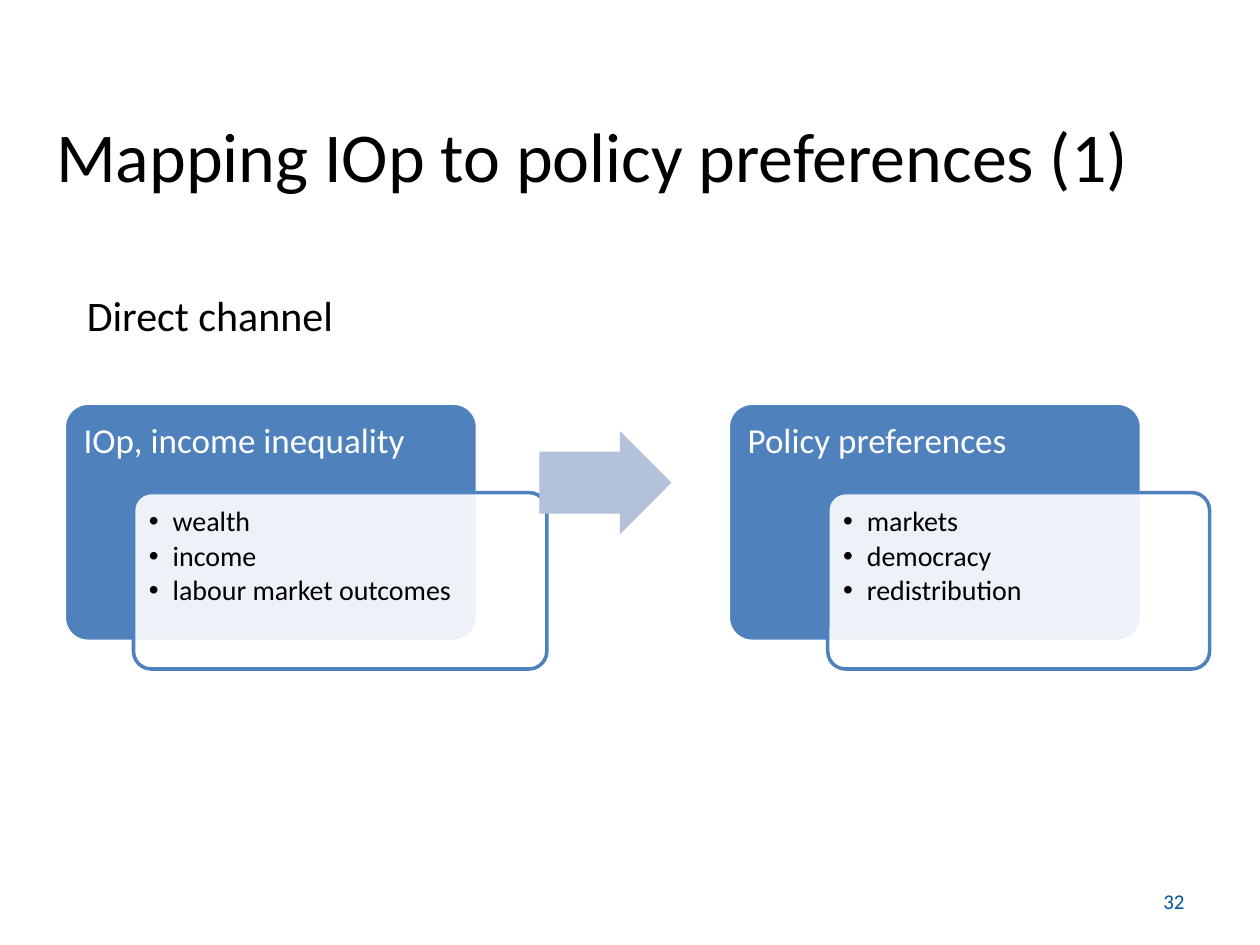
from dataclasses import dataclass

from lxml.etree import SubElement
from pptx import Presentation
from pptx.dml.color import RGBColor
from pptx.enum.shapes import MSO_SHAPE
from pptx.enum.text import MSO_ANCHOR, PP_ALIGN
from pptx.oxml.ns import qn
from pptx.util import Inches, Pt


@dataclass(frozen=True)
class Theme:
    font: str = "Calibri"
    black: RGBColor = RGBColor(0x00, 0x00, 0x00)
    white: RGBColor = RGBColor(0xFF, 0xFF, 0xFF)
    blue: RGBColor = RGBColor(0x4F, 0x81, 0xBD)
    pale_blue: RGBColor = RGBColor(0xB3, 0xC1, 0xDB)
    number_blue: RGBColor = RGBColor(0x00, 0x53, 0x9B)
    title_size: Pt = Pt(40)
    subtitle_size: Pt = Pt(24)
    heading_size: Pt = Pt(20)
    bullet_size: Pt = Pt(16)
    number_size: Pt = Pt(12)


theme = Theme()


def write(box, lines, size, color, align=PP_ALIGN.LEFT, anchor=MSO_ANCHOR.TOP, margin=None):
    """Fill a shape's text frame with one paragraph per line and return the paragraphs."""
    frame = box.text_frame
    frame.word_wrap = True
    frame.vertical_anchor = anchor
    if margin is not None:
        frame.margin_left = frame.margin_top = frame.margin_right = frame.margin_bottom = margin
    for index, line in enumerate(lines):
        para = frame.add_paragraph() if index else frame.paragraphs[0]
        para.alignment = align
        span = para.add_run()
        span.text = line
        span.font.name = theme.font
        span.font.size = size
        span.font.color.rgb = color
    return frame.paragraphs


def add_panel(left, top, width, height, fill, line):
    panel = page.shapes.add_shape(
        MSO_SHAPE.ROUNDED_RECTANGLE, Inches(left), Inches(top), Inches(width), Inches(height))
    panel.adjustments[0] = 0.1
    panel.shadow.inherit = False
    panel.fill.solid()
    panel.fill.fore_color.rgb = fill
    panel.line.color.rgb = line
    panel.line.width = Pt(2)
    return panel


deck = Presentation()
deck.slide_width, deck.slide_height = Inches(10), Inches(7.5)
page = deck.slides.add_slide(deck.slide_layouts[5])

title = page.shapes.title
title.left, title.top = Inches(0.2), Inches(0.6)
title.width, title.height = Inches(9), Inches(1.25)
write(title, ["Mapping IOp to policy preferences (1)"], theme.title_size, theme.black,
      PP_ALIGN.CENTER, MSO_ANCHOR.MIDDLE)

subtitle = page.shapes.add_textbox(Inches(0.59), Inches(2.25), Inches(8.11), Inches(0.5))
write(subtitle, ["Direct channel"], theme.subtitle_size, theme.black)

# Heading, card left, detail left, detail width, bullets
stages = [
    ("IOp, income inequality", 0.51, 1.06, 3.28,
     ["wealth", "income", "labour market outcomes"]),
    ("Policy preferences", 5.78, 6.57, 3.03,
     ["markets", "democracy", "redistribution"]),
]
for heading, card_left, detail_left, detail_width, bullets in stages:
    card = add_panel(card_left, 3.2, 3.28, 1.89, theme.blue, theme.white)
    for para in write(card, [heading], theme.heading_size, theme.white, margin=Inches(0.1)):
        para.line_spacing = 0.9

    detail = add_panel(detail_left, 3.91, detail_width, 1.4, theme.white, theme.blue)
    fill_color = detail.fill._xPr.find(qn("a:solidFill"))[0]
    SubElement(fill_color, qn("a:alpha"), val="90000")
    for para in write(detail, bullets, theme.bullet_size, theme.black, margin=Inches(0.08)):
        para.line_spacing = 0.9
        para.space_after = Pt(2.4)
        properties = para._p.get_or_add_pPr()
        properties.set("marL", str(Inches(0.19)))
        properties.set("indent", str(-Inches(0.19)))
        SubElement(properties, qn("a:buFont"), typeface="Arial")
        SubElement(properties, qn("a:buChar"), char="•")

arrow = page.shapes.add_shape(
    MSO_SHAPE.RIGHT_ARROW, Inches(4.28), Inches(3.42), Inches(1.05), Inches(0.82))
arrow.adjustments[0] = 0.6
arrow.adjustments[1] = 0.5
arrow.shadow.inherit = False
arrow.fill.solid()
arrow.fill.fore_color.rgb = theme.pale_blue
arrow.line.fill.background()

number = page.shapes.add_textbox(Inches(7.17), Inches(6.95), Inches(2.33), Inches(0.4))
write(number, ["32"], theme.number_size, theme.number_blue, PP_ALIGN.RIGHT, MSO_ANCHOR.MIDDLE)

deck.save("out.pptx")
